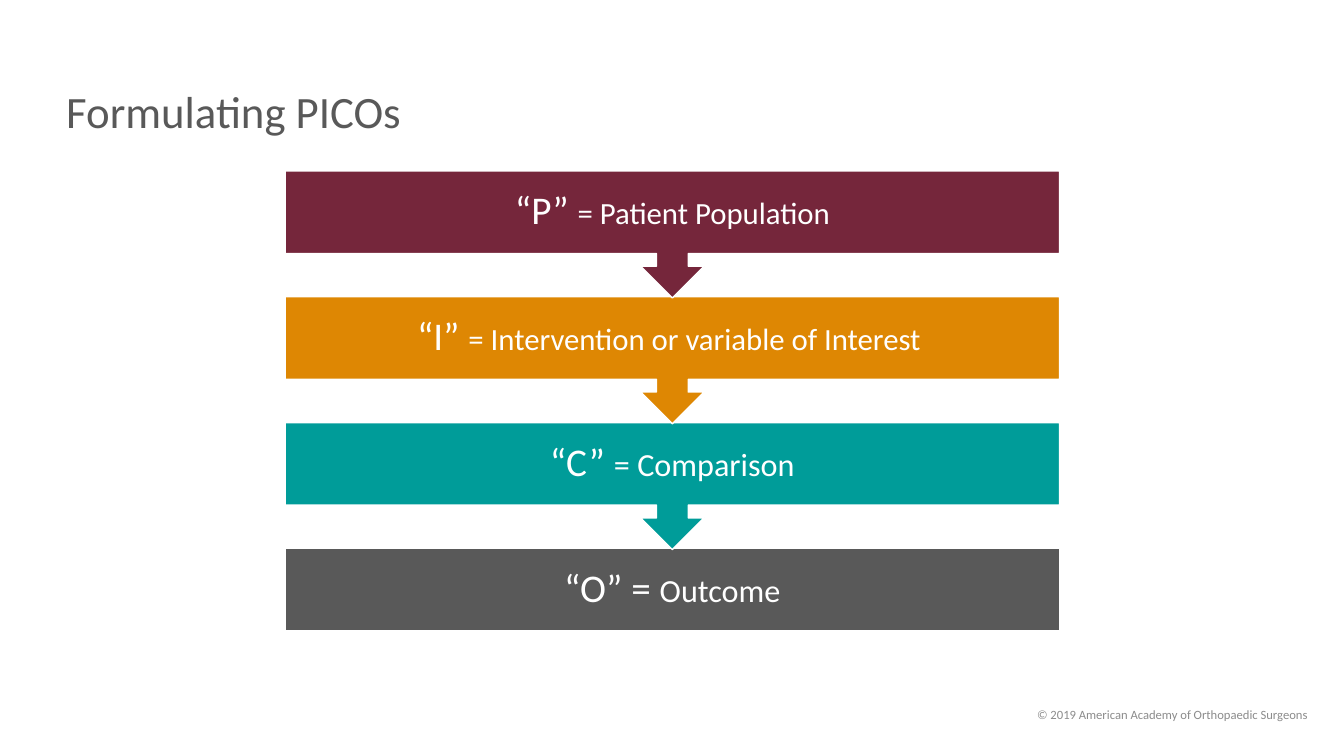
"""Build the "Formulating PICOs" slide: four stacked steps linked by arrows."""
from pptx import Presentation
from pptx.dml.color import RGBColor
from pptx.enum import shapes, text
from pptx.util import Cm, Pt


def paint(color_format, hex_color):
    color_format.rgb = RGBColor.from_string(hex_color)


def add_run(paragraph, words, size, hex_color):
    run = paragraph.add_run()
    run.text = words
    run.font.name = "Calibri"
    run.font.size = Pt(size)
    paint(run.font.color, hex_color)


deck = Presentation()
deck.slide_width = Cm(33.87)
deck.slide_height = Cm(19.05)
slide = deck.slides.add_slide(deck.slide_layouts[6])

LEFT, ALIGN_RIGHT = text.PP_ALIGN.LEFT, text.PP_ALIGN.RIGHT
captions = [
    ("© 2019 American Academy of Orthopaedic Surgeons ", 9, "8C8C8C", ALIGN_RIGHT, 1, (21.84, 17.5, 11.43, 1.02)),
    ("Formulating PICOs", 32, "595959", LEFT, 0.9, (1.42, 1.93, 30.91, 1.9)),
]
for words, size, color, alignment, spacing, place in captions:
    caption = slide.shapes.add_textbox(*map(Cm, place)).text_frame
    caption.word_wrap = True
    caption.vertical_anchor = text.MSO_ANCHOR.MIDDLE
    line = caption.paragraphs[0]
    line.alignment = alignment
    line.line_spacing = spacing
    add_run(line, words, size, color)

BOX = shapes.MSO_SHAPE.RECTANGLE
CALLOUT = shapes.MSO_SHAPE.DOWN_ARROW_CALLOUT
steps = [
    ("“P” ", "= Patient Population", 22, "75263B", CALLOUT, 3.2),
    ("“I” ", "= Intervention or variable of Interest ", 22, "DE8703", CALLOUT, 3.2),
    ("“C” ", "= Comparison", 23, "009C99", CALLOUT, 3.2),
    ("“O” = ", "Outcome", 23, "595959", BOX, 2.08),
]
first_top, pitch = 4.31, 3.17
for index, (letter, meaning, size, color, outline, height) in reversed(list(enumerate(steps))):
    step = slide.shapes.add_shape(outline, Cm(7.19), Cm(first_top + index * pitch), Cm(19.51), Cm(height))
    step.shadow.inherit = False
    step.fill.solid()
    paint(step.fill.fore_color, color)
    paint(step.line.color, "FFFFFF")
    step.line.width = Pt(1)
    label = step.text_frame
    label.word_wrap = True
    label.vertical_anchor = text.MSO_ANCHOR.MIDDLE
    label.margin_left = label.margin_right = label.margin_top = label.margin_bottom = Cm(0.55)
    line = label.paragraphs[0]
    line.alignment = text.PP_ALIGN.CENTER
    line.line_spacing = 0.9
    add_run(line, letter, 28, "FFFFFF")
    add_run(line, meaning, size, "FFFFFF")

deck.save("out.pptx")
